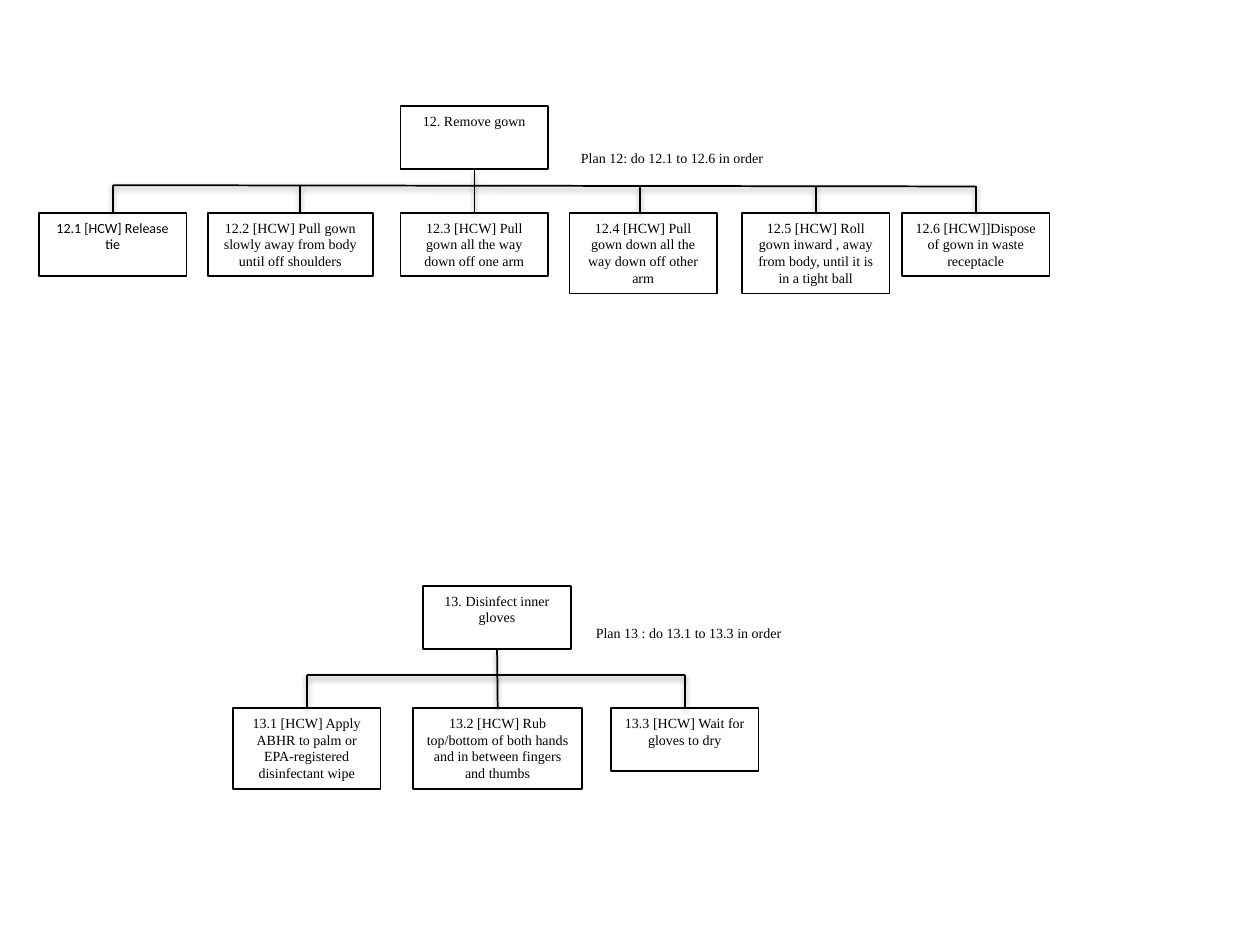
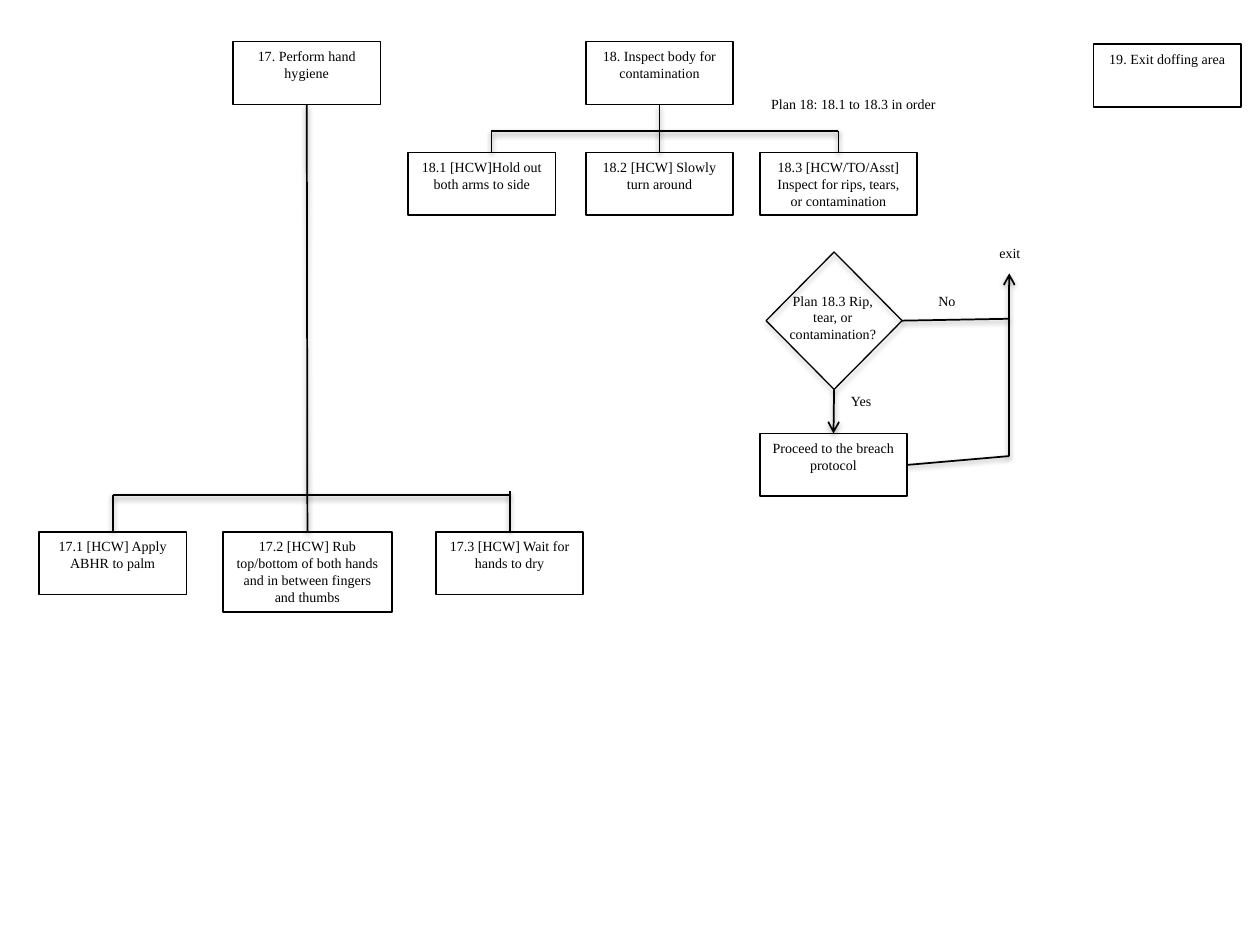
from dataclasses import dataclass
from typing import Optional

from lxml.etree import SubElement
from pptx import Presentation
from pptx.dml.color import RGBColor
from pptx.enum.shapes import MSO_CONNECTOR, MSO_SHAPE
from pptx.enum.text import MSO_ANCHOR, PP_ALIGN
from pptx.oxml.ns import qn
from pptx.util import Inches, Pt

BLACK = RGBColor(0x00, 0x00, 0x00)
WHITE = RGBColor(0xFF, 0xFF, 0xFF)
SERIF = "Times New Roman"
SANS = "Calibri"
TEXT_SIZE = Pt(8)
BOX_WIDTH = 1.17
BOX_HEIGHT = 0.5
TALL_HEIGHT = 0.64
TOP, LEFT, BOTTOM, RIGHT = range(4)  # connection sites


@dataclass
class Step:
    """A child task; drop_x is set where its line is off the box's centre."""
    text: str
    left: float
    width: float = BOX_WIDTH
    height: float = BOX_HEIGHT
    font: str = SERIF
    drop_x: Optional[float] = None
    drop_y: Optional[float] = None

    @property
    def line_x(self):
        return self.drop_x or self.left + self.width / 2


class TaskChart:
    def __init__(self, presentation):
        self.presentation = presentation
        self.slide = None

    def new_slide(self):
        self.slide = self.presentation.slides.add_slide(
            self.presentation.slide_layouts[6])

    def set_text(self, shape, text, font=SERIF, align=PP_ALIGN.CENTER, wrap=True):
        frame = shape.text_frame
        frame.text = text
        frame.word_wrap = wrap
        frame.vertical_anchor = MSO_ANCHOR.TOP
        paragraph = frame.paragraphs[0]
        paragraph.alignment = align
        for run in paragraph.runs:
            run.font.name = font
            run.font.size = TEXT_SIZE
            run.font.color.rgb = BLACK

    def cast_shadow(self, shape, opacity=38, distance=1.6):
        effects = SubElement(shape._element.spPr, qn("a:effectLst"))
        shadow = SubElement(
            effects, qn("a:outerShdw"), blurRad=str(Pt(3.1)),
            dist=str(Pt(distance)), dir="5400000", rotWithShape="0")
        color = SubElement(shadow, qn("a:srgbClr"), val=str(BLACK))
        SubElement(color, qn("a:alpha"), val=str(opacity * 1000))

    def box(self, text, left, top, width=BOX_WIDTH, height=BOX_HEIGHT, font=SERIF):
        shape = self.slide.shapes.add_shape(
            MSO_SHAPE.RECTANGLE, Inches(left), Inches(top),
            Inches(width), Inches(height))
        shape.shadow.inherit = False
        shape.fill.solid()
        shape.fill.fore_color.rgb = WHITE
        shape.line.color.rgb = BLACK
        shape.line.width = Pt(1)
        self.set_text(shape, text, font)
        return shape

    def diamond(self, left, top, width, height):
        shape = self.slide.shapes.add_shape(
            MSO_SHAPE.DIAMOND, Inches(left), Inches(top),
            Inches(width), Inches(height))
        shape.fill.background()
        shape.line.color.rgb = BLACK
        shape.line.width = Pt(0.75)
        self.cast_shadow(shape, opacity=35, distance=1.8)
        return shape

    def label(self, text, left, top, width, height=0.24,
              align=PP_ALIGN.CENTER, wrap=True):
        shape = self.slide.shapes.add_textbox(
            Inches(left), Inches(top), Inches(width), Inches(height))
        self.set_text(shape, text, align=align, wrap=wrap)

    def line(self, start, end, begin=None, finish=None, arrow=False):
        """Draw a line; begin and finish are (shape, site) pairs to join."""
        connector = self.slide.shapes.add_connector(
            MSO_CONNECTOR.STRAIGHT, *(Inches(value) for value in (*start, *end)))
        if begin:
            connector.begin_connect(*begin)
        if finish:
            connector.end_connect(*finish)
        connector.line.color.rgb = BLACK
        connector.line.width = Pt(1)
        if arrow:
            outline = connector._element.spPr.find(qn("a:ln"))
            SubElement(outline, qn("a:tailEnd"), type="arrow")
        self.cast_shadow(connector)

    def tree(self, title, left, top, bar_y, steps_top, steps, trunk, bar_end_y=None):
        """Parent box, crossbar and child boxes; the trunk runs to one child."""
        bar_end_y = bar_end_y or bar_y
        parent = self.box(title, left, top)
        children = [self.box(step.text, step.left, steps_top, step.width,
                             step.height, step.font) for step in steps]
        self.line((steps[0].line_x, bar_y), (steps[-1].line_x, bar_end_y))
        for index, (step, child) in enumerate(zip(steps, children)):
            x = step.line_x
            joint = None if step.drop_x else (child, TOP)
            if index == trunk:
                self.line((x, top + BOX_HEIGHT), (x, steps_top),
                          (parent, BOTTOM), joint)
            else:
                start_y = step.drop_y or (bar_y if index == 0 else bar_end_y)
                self.line((x, start_y), (x, steps_top), finish=joint)


def gown_and_gloves(chart):
    chart.new_slide()

    # Task 12
    chart.tree("12. Remove gown", 3.18, 0.84, 1.47, 1.69, [
        Step("12.1 [HCW] Release tie", 0.31, font=SANS),
        Step("12.2 [HCW] Pull gown slowly away from body until off shoulders",
             1.65, width=1.31, drop_x=2.38),
        Step("12.3 [HCW] Pull gown all the way down off one arm", 3.18),
        Step("12.4 [HCW] Pull gown down all the way down off other arm",
             4.52, height=TALL_HEIGHT, drop_x=5.08),
        Step("12.5 [HCW] Roll gown inward , away from body, until it is in a tight ball",
             5.89, height=TALL_HEIGHT),
        Step("12.6 [HCW]]Dispose of gown in waste receptacle", 7.16),
    ], trunk=2, bar_end_y=1.48)
    chart.label("Plan 12: do 12.1 to 12.6 in order", 4.5, 1.14, 1.67, wrap=False)

    # Task 13
    chart.tree("13. Disinfect inner gloves", 3.36, 4.65, 5.36, 5.62, [
        Step("13.1 [HCW] Apply ABHR to palm or EPA-registered disinfectant wipe",
             1.85, height=TALL_HEIGHT),
        Step("13.2 [HCW] Rub top/bottom of both hands and in between fingers and thumbs",
             3.28, width=1.34, height=TALL_HEIGHT),
        Step("13.3 [HCW] Wait for gloves to dry", 4.85),
    ], trunk=1)
    chart.label("Plan 13 : do 13.1 to 13.3 in order", 4.63, 4.91, 2.52,
                align=PP_ALIGN.LEFT)


def hygiene_and_exit(chart):
    chart.new_slide()

    # Task 17
    chart.tree("17. Perform hand hygiene", 1.85, 0.33, 3.93, 4.22, [
        Step("17.1 [HCW] Apply ABHR to palm", 0.31),
        Step("17.2 [HCW] Rub top/bottom of both hands and in between fingers and thumbs",
             1.77, width=1.34, height=TALL_HEIGHT),
        Step("17.3 [HCW] Wait for hands to dry", 3.46, drop_y=3.9),
    ], trunk=1)

    # Task 18
    chart.tree("18. Inspect body for contamination", 4.65, 0.33, 1.04, 1.21, [
        Step("18.1 [HCW]Hold out both arms to side", 3.24, drop_x=3.9),
        Step("18.2 [HCW] Slowly turn around", 4.65),
        Step("18.3 [HCW/TO/Asst] Inspect for rips, tears, or contamination",
             6.03, width=1.25),
    ], trunk=1)
    chart.label("Plan 18: 18.1 to 18.3 in order", 6.01, 0.71, 1.53, wrap=False)

    # Decision for step 18.3
    exit_x = 8.01
    decision = chart.diamond(6.08, 2, 1.08, 1.09)
    chart.label("Plan 18.3 Rip, tear, or contamination?", 6.12, 2.27, 0.98, 0.5)
    breach = chart.box("Proceed to the breach protocol", 6.03, 3.44)
    chart.line((6.62, 3.09), (6.62, 3.44), (decision, BOTTOM), (breach, TOP), arrow=True)
    chart.line((exit_x, 3.62), (exit_x, 2.17), arrow=True)
    chart.line((exit_x, 3.62), (7.2, 3.69), finish=(breach, RIGHT))
    chart.line((7.16, 2.55), (exit_x, 2.53), begin=(decision, RIGHT))
    for text, left, top in (("No", 7.32, 2.27), ("Yes", 6.64, 3.07),
                            ("exit", 7.82, 1.89)):
        chart.label(text, left, top, 0.39)

    # Task 19
    chart.box("19. Exit doffing area", 8.68, 0.35)


def main():
    presentation = Presentation()
    presentation.slide_width = Inches(10)
    presentation.slide_height = Inches(7.5)
    chart = TaskChart(presentation)
    gown_and_gloves(chart)
    hygiene_and_exit(chart)
    presentation.save("out.pptx")


if __name__ == "__main__":
    main()
